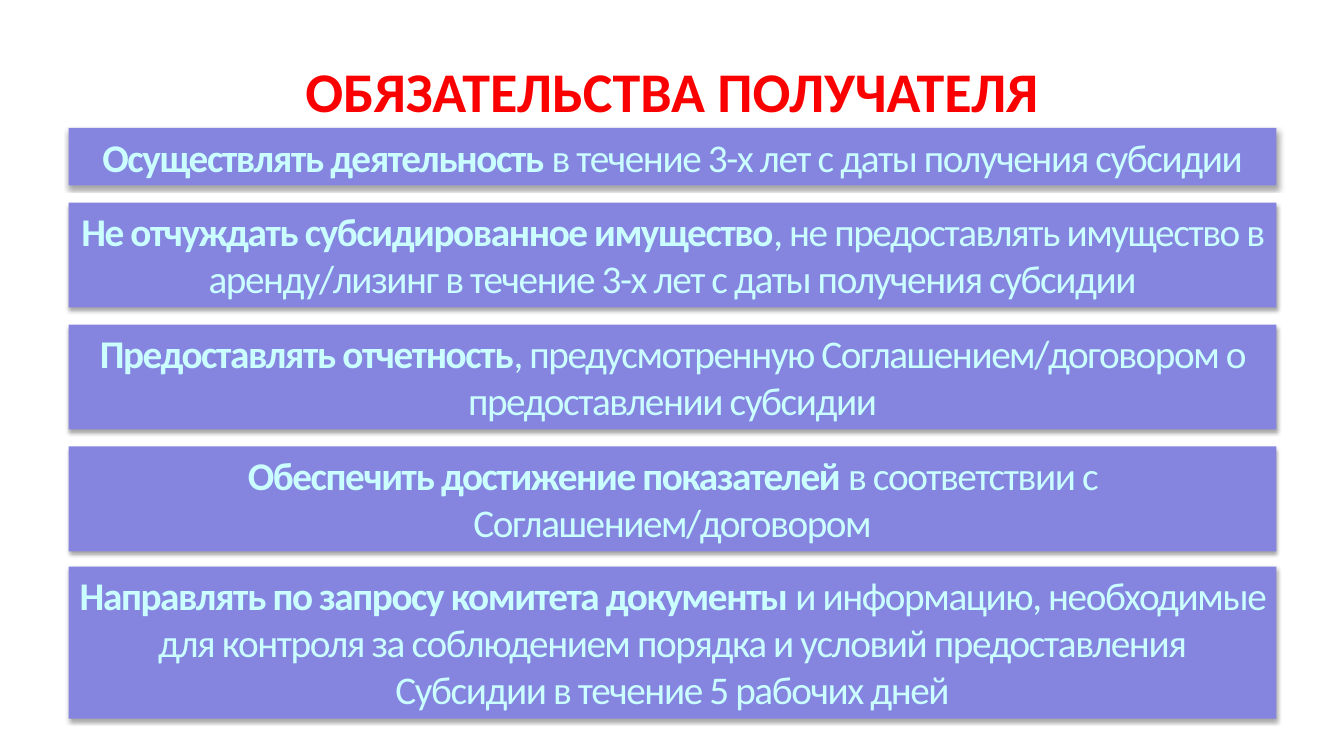
from dataclasses import dataclass

from lxml import etree
from pptx import Presentation
from pptx.dml.color import RGBColor
from pptx.enum.shapes import MSO_SHAPE
from pptx.enum.text import MSO_ANCHOR, PP_ALIGN
from pptx.oxml import parse_xml
from pptx.oxml.ns import nsdecls
from pptx.util import Inches, Pt


@dataclass(frozen=True)
class Theme:
    font: str = "Calibri"
    title_size: Pt = Pt(40)
    body_size: Pt = Pt(28)
    title: RGBColor = RGBColor(0xFA, 0x00, 0x00)
    bar: RGBColor = RGBColor(0x85, 0x85, 0xE0)
    body: RGBColor = RGBColor(0xCB, 0xFF, 0xFF)


THEME = Theme()
SHADOW = (
    f'<a:effectLst {nsdecls("a")}>'
    f'<a:outerShdw blurRad="{Pt(3.1)}" dist="{Pt(1.8)}" dir="5400000" rotWithShape="0">'
    '<a:srgbClr val="000000"><a:alpha val="35000"/></a:srgbClr>'
    "</a:outerShdw></a:effectLst>"
)

# Top, height, then paragraphs as (bold lead, plain rest)
OBLIGATIONS = [
    (1.27, 0.57, [("Осуществлять деятельность ",
                   "в течение 3-х лет с даты получения субсидии")]),
    (2.01, 1.04, [("Не отчуждать субсидированное имущество",
                   ", не предоставлять имущество в аренду/лизинг "
                   "в течение 3-х лет с даты получения субсидии")]),
    (3.22, 1.04, [("Предоставлять отчетность",
                   ", предусмотренную Соглашением/договором о предоставлении субсидии")]),
    (4.43, 1.04, [("Обеспечить достижение показателей ",
                   "в соответствии с Соглашением/договором")]),
    (5.62, 1.51, [("Направлять по запросу комитета документы ",
                   "и информацию, необходимые для контроля за соблюдением "
                   "порядка и условий предоставления"),
                  ("", "Субсидии в течение 5 рабочих дней")]),
]


def style_paragraph(para, size, color):
    para.alignment = PP_ALIGN.CENTER
    para.font.name = THEME.font
    para.font.size = size
    para.font.color.rgb = color


deck = Presentation()
deck.slide_width, deck.slide_height = Inches(13.33), Inches(7.5)
page = deck.slides.add_slide(deck.slide_layouts[5])

title = page.shapes.title
title.left, title.top = Inches(0), Inches(0.21)
title.width, title.height = Inches(13.33), Inches(1.43)
title.text_frame.text = "ОБЯЗАТЕЛЬСТВА ПОЛУЧАТЕЛЯ"
title.text_frame.vertical_anchor = MSO_ANCHOR.MIDDLE
heading = title.text_frame.paragraphs[0]
style_paragraph(heading, THEME.title_size, THEME.title)
heading.font.bold = True
heading.line_spacing = 0.96

for top, height, paragraphs in OBLIGATIONS:
    bar = page.shapes.add_shape(
        MSO_SHAPE.RECTANGLE, Inches(0.68), Inches(top), Inches(11.98), Inches(height))
    bar.fill.solid()
    bar.fill.fore_color.rgb = THEME.bar
    bar.line.fill.background()
    bar._element.spPr.append(parse_xml(SHADOW))
    frame = bar.text_frame
    frame.word_wrap = True
    frame.vertical_anchor = MSO_ANCHOR.TOP
    for index, (lead, rest) in enumerate(paragraphs):
        para = frame.add_paragraph() if index else frame.paragraphs[0]
        style_paragraph(para, THEME.body_size, THEME.body)
        for text, bold in ((lead, True), (rest, False)):
            if text:
                span = para.add_run()
                span.text = text
                span.font.bold = bold
                span.font._element.set("spc", "-100")

deck.save("out.pptx")
